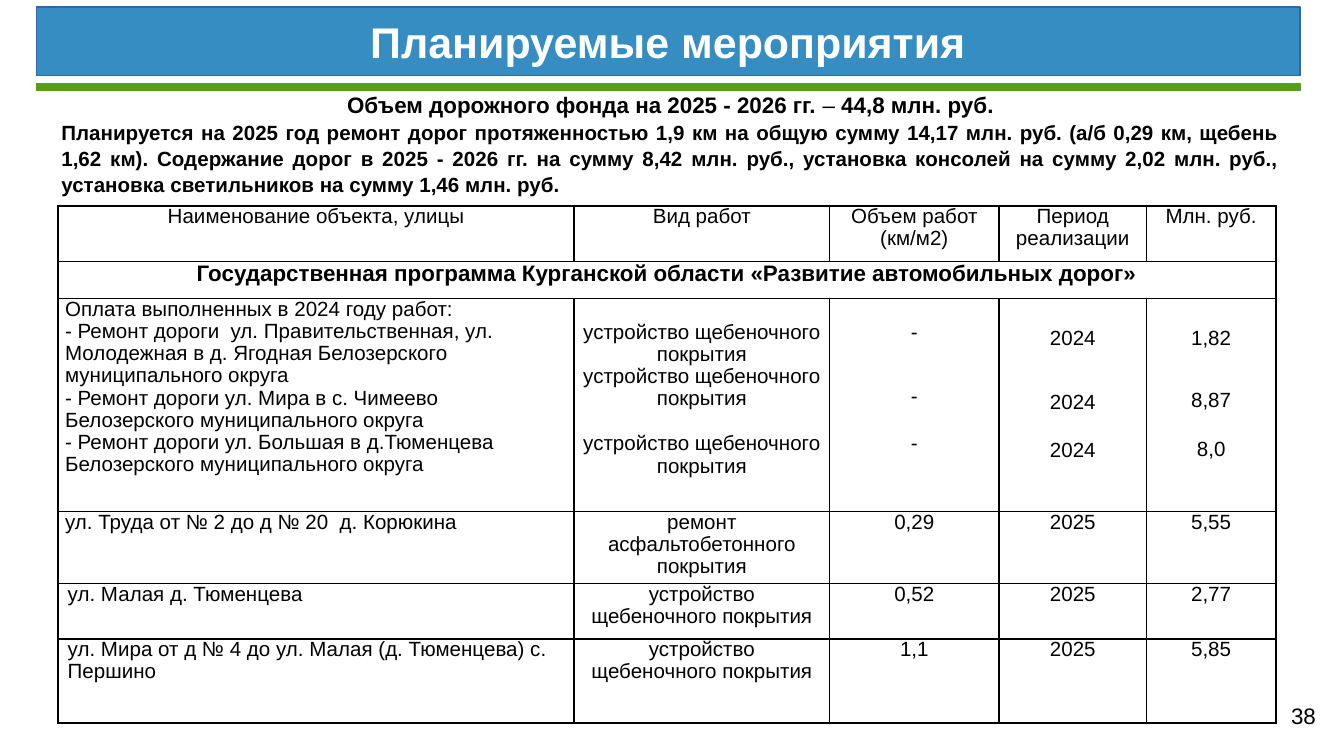
from lxml.etree import SubElement
from pptx import Presentation
from pptx.dml.color import RGBColor
from pptx.enum.shapes import MSO_SHAPE
from pptx.enum.text import MSO_ANCHOR, MSO_AUTO_SIZE, PP_ALIGN
from pptx.oxml.ns import qn
from pptx.util import Cm, Pt

BLACK, WHITE, BLUE, EDGE, GREEN = "000000", "FFFFFF", "358DC1", "3465A4", "579D1C"
LEFT, CENTER, JUSTIFY = PP_ALIGN.LEFT, PP_ALIGN.CENTER, PP_ALIGN.JUSTIFY


def rgb(value):
    return RGBColor.from_string(value)


def add_text(p, text, size=11, bold=False, color=BLACK, align=LEFT, before=0, spacing=1.0):
    """Append a run to a paragraph and format both."""
    p.alignment, p.line_spacing = align, spacing
    p.space_before, p.space_after = Pt(before), Pt(0)
    r = p.add_run()
    r.text = text
    r.font.name, r.font.size, r.font.bold = "Arial", Pt(size), bold
    r.font.color.rgb = rgb(color)
    return r


def next_paragraph(tf, index):
    return tf.paragraphs[0] if index == 0 else tf.add_paragraph()


class SlideBuilder:
    """Holds the slide and the shared style."""

    border = 0.96
    table_spacing = 0.97

    def __init__(self, prs):
        self.s = prs.slides.add_slide(prs.slide_layouts[1])

    def place(self, sp, x, y, w, h, margins):
        sp.left, sp.top, sp.width, sp.height = Cm(x), Cm(y), Cm(w), Cm(h)
        tf = sp.text_frame
        tf.word_wrap, tf.auto_size = True, MSO_AUTO_SIZE.NONE
        tf.margin_left = tf.margin_right = Cm(margins[0])
        tf.margin_top = tf.margin_bottom = Cm(margins[1])
        return tf

    def paint(self, sp, fill, line):
        sp.fill.solid()
        sp.fill.fore_color.rgb = rgb(fill)
        sp.line.color.rgb = rgb(line)
        sp.line.width = Pt(0.75)

    def title(self, text, *box):
        sp = self.s.shapes.title
        tf = self.place(sp, *box, margins=(0.23, 0.1))
        tf.vertical_anchor = MSO_ANCHOR.MIDDLE
        self.paint(sp, BLUE, EDGE)
        add_text(tf.paragraphs[0], text, size=23, bold=True, color=WHITE, align=CENTER)

    def bar(self, *box):
        sp = self.s.shapes.add_shape(MSO_SHAPE.RECTANGLE, *map(Cm, box))
        sp.shadow.inherit = False
        self.paint(sp, GREEN, GREEN)

    def body(self, paragraphs, *box):
        tf = self.place(self.s.placeholders[1], *box, margins=(0.25, 0.13))
        tf.vertical_anchor = MSO_ANCHOR.TOP
        for i, (runs, style) in enumerate(paragraphs):
            p = next_paragraph(tf, i)
            for text, bold in runs:
                add_text(p, text, bold=bold, **style)
            pPr = p._p.get_or_add_pPr()
            pPr.set("marL", "0")
            pPr.set("indent", "0")
            SubElement(pPr, qn("a:buNone"))

    def label(self, text, *box):
        sp = self.s.shapes.add_textbox(0, 0, 0, 0)
        tf = self.place(sp, *box, margins=(0.2, 0.13))
        add_text(tf.paragraphs[0], text, size=12)

    def outline(self, cell):
        tcPr = cell._tc.get_or_add_tcPr()
        for i, side in enumerate(("lnL", "lnR", "lnT", "lnB")):
            ln = SubElement(tcPr, qn(f"a:{side}"), w=str(Pt(self.border)))
            fill = SubElement(ln, qn("a:solidFill"))
            SubElement(fill, qn("a:srgbClr"), val=BLACK)
            tcPr.insert(i, ln)

    def cell(self, cell, items, top=0, side=0.13, **style):
        """Fill a cell with (text, space before) items."""
        cell.margin_left = cell.margin_right = Cm(side)
        cell.margin_top, cell.margin_bottom = Pt(top), 0
        for i, (text, gap) in enumerate(items):
            p = next_paragraph(cell.text_frame, i)
            add_text(p, text, before=gap, spacing=self.table_spacing, **style)

    def table(self, x, y, cols, rows):
        frame = self.s.shapes.add_table(len(rows), len(cols), Cm(x), Cm(y),
                                        Cm(sum(cols)), Cm(sum(rows)))
        t = frame.table
        t.first_row = t.horz_banding = False
        for col, width in zip(t.columns, cols):
            col.width = Cm(width)
        for row, height in zip(t.rows, rows):
            row.height = Cm(height)
        for cell in t.iter_cells():
            cell.fill.background()
            self.outline(cell)
        return t


HEADER = ["Наименование объекта, улицы", "Вид работ", "Объем работ (км/м2)",
          "Период реализации", "Млн. руб."]
PROGRAM = "Государственная программа Курганской области «Развитие автомобильных дорог»"
GRAVEL = "устройство щебеночного покрытия"

# Works paid for 2024: top margin and (text, space before) items per column
PAID = [
    (0, [("Оплата выполненных в 2024 году работ:", 0),
         ("- Ремонт дороги  ул. Правительственная, ул. Молодежная в д. Ягодная "
          "Белозерского муниципального округа", 0),
         ("- Ремонт дороги ул. Мира в с. Чимеево Белозерского муниципального округа", 0),
         ("- Ремонт дороги ул. Большая в д.Тюменцева Белозерского муниципального округа", 0)]),
    (12.3, [(GRAVEL, 0), (GRAVEL, 0), (GRAVEL, 12.3)]),
    (12.3, [("-", 0), ("-", 22.5), ("-", 13.5)]),
    (15.5, [("2024", 0), ("2024", 22.5), ("2024", 14)]),
    (15.5, [("1,82", 0), ("8,87", 21.5), ("8,0", 14.5)]),
]

# Works planned for 2025: side margin and cell texts
PLANNED = [
    (0.13, ["ул. Труда от № 2 до д № 20  д. Корюкина",
            "ремонт асфальтобетонного покрытия", "0,29", "2025", "5,55"]),
    (0.18, ["ул. Малая д. Тюменцева", GRAVEL, "0,52", "2025", "2,77"]),
    (0.18, ["ул. Мира от д № 4 до ул. Малая (д. Тюменцева) с. Першино",
            GRAVEL, "1,1", "2025", "5,85"]),
]

INTRO = [
    ([("Объем дорожного фонда на 2025 - 2026 гг. ", True), ("–", False),
      (" 44,8 млн. руб.", True)], dict(size=12, align=CENTER)),
    ([("Планируется на 2025 год ремонт дорог протяженностью 1,9 км на общую сумму "
       "14,17 млн. руб. (а/б 0,29 км, щебень 1,62 км). Содержание дорог в 2025 - 2026 гг. "
       "на сумму 8,42 млн. руб., установка консолей на сумму 2,02 млн. руб., "
       "установка светильников на сумму 1,46 млн. руб.", True)],
     dict(align=JUSTIFY, spacing=1.05)),
]


def main():
    prs = Presentation()
    prs.slide_width, prs.slide_height = Cm(25.4), Cm(14.28)
    b = SlideBuilder(prs)

    # Heading and introduction
    b.title("Планируемые мероприятия", 0.69, 0.13, 23.88, 1.3)
    b.bar(0.69, 1.58, 23.88, 0.13)
    b.body(INTRO, 0.91, 1.6, 23.52, 2.16)

    # Table of works
    t = b.table(1.1, 3.89, [9.75, 4.83, 3.2, 2.79, 2.44],
                [1.05, 0.7, 4.02, 1.36, 1.05, 1.59])
    for c, text in enumerate(HEADER):
        b.cell(t.cell(0, c), [(text, 0)], align=CENTER)
    t.cell(1, 0).merge(t.cell(1, 4))
    b.cell(t.cell(1, 0), [(PROGRAM, 0)], size=12, bold=True, align=CENTER)
    for c, (top, items) in enumerate(PAID):
        b.cell(t.cell(2, c), items, top=top, align=CENTER if c else LEFT)
    for row, (side, texts) in enumerate(PLANNED, 3):
        for c, text in enumerate(texts):
            b.cell(t.cell(row, c), [(text, 0)], side=side, align=CENTER if c else LEFT)

    # Page number
    b.label("38", 24.2, 13.13, 1.2, 1)
    prs.save("out.pptx")


if __name__ == "__main__":
    main()
